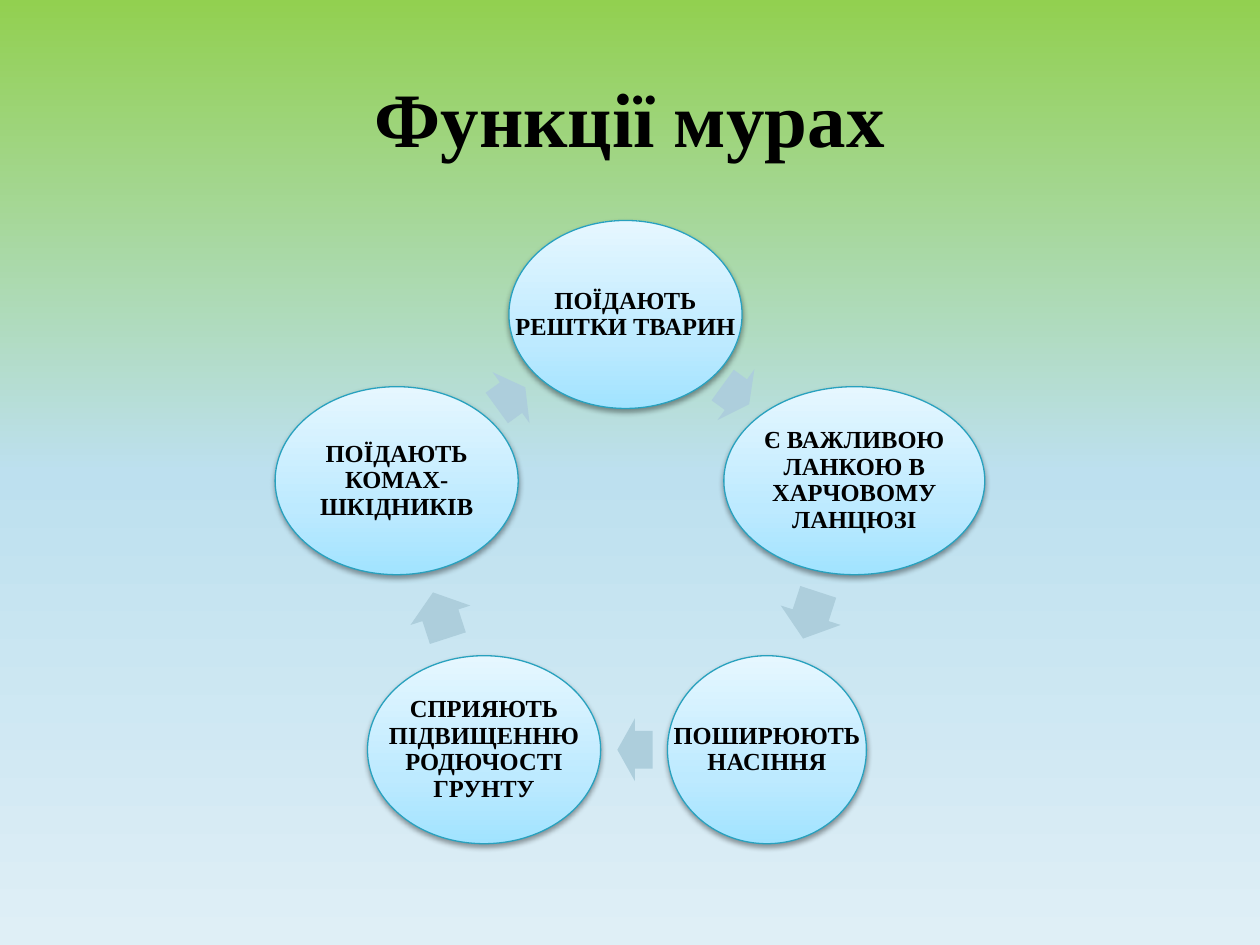
"""Build a slide with a five-step ring of the functions of ants."""
from math import cos, radians, sin

from lxml import etree
from pptx import Presentation
from pptx.dml.color import RGBColor
from pptx.enum.shapes import MSO_SHAPE
from pptx.enum.text import MSO_ANCHOR, PP_ALIGN
from pptx.oxml.ns import qn
from pptx.util import Cm, Pt

ELLIPSE, ARROW = MSO_SHAPE.OVAL, MSO_SHAPE.RIGHT_ARROW
MIDDLE, CENTER = MSO_ANCHOR.MIDDLE, PP_ALIGN.CENTER
COLORS = {
    "text": "000000", "outline": "28A1BE", "arrow": "ADCEDC",
    "grass": "92D050", "sky": "BDE0EF", "haze": "DFEFF6",
    "deep": "A1E3FF", "mid": "BDEAFF", "pale": "E6F7FF",
}
FONT = "Times New Roman"
CX, CY, RADIUS = 12.61, 11.19, 4.85
NODE_H, ARROW_H = 3.79, 1.27
STEPS = [
    ("ПОЇДАЮТЬ РЕШТКИ ТВАРИН", 4.7, 0.66, -0.1),
    ("Є ВАЖЛИВОЮ ЛАНКОЮ В ХАРЧОВОМУ ЛАНЦЮЗІ", 5.26, 0.99, 0),
    ("ПОШИРЮЮТЬ НАСІННЯ", 4.01, 0.71, -0.19),
    ("СПРИЯЮТЬ ПІДВИЩЕННЮ РОДЮЧОСТІ ГРУНТУ", 4.7, 0.97, 0),
    ("ПОЇДАЮТЬ КОМАХ-ШКІДНИКІВ", 4.9, 0.71, 0),
]


def set_gradient(fill, element, stops, angle):
    fill.gradient()
    grad = element.find(".//" + qn("a:gradFill"))
    gs_lst = grad.find(qn("a:gsLst"))
    gs_lst.clear()
    for pos, name in stops:
        gs = etree.SubElement(gs_lst, qn("a:gs"), pos=str(pos * 1000))
        etree.SubElement(gs, qn("a:srgbClr"), val=COLORS[name])
    grad.find(qn("a:lin")).set("ang", str(angle * 60000))


def add_text(box, text, size, inset_x, inset_y, spacing):
    tb = s.shapes.add_textbox(*box)
    tf = tb.text_frame
    tf.word_wrap = True
    tf.vertical_anchor = MIDDLE
    tf.margin_left = tf.margin_right = Cm(inset_x)
    tf.margin_top = tf.margin_bottom = Cm(inset_y)
    p = tf.paragraphs[0]
    p.text = text
    p.alignment = CENTER
    p.line_spacing = spacing
    p.font.name = FONT
    p.font.size = Pt(size)
    p.font.bold = True
    p.font.color.rgb = RGBColor.from_string(COLORS["text"])


prs = Presentation()
prs.slide_width, prs.slide_height = Cm(25.4), Cm(19.05)
s = prs.slides.add_slide(prs.slide_layouts[6])
set_gradient(s.background.fill, s._element,
             [(0, "grass"), (50, "sky"), (100, "haze")], 90)

add_text((Cm(1.27), Cm(0.76), Cm(22.86), Cm(3.18)),
         "Функції мурах", 44, 0.25, 0.13, 1.0)

for i, (text, width, arrow_w, shift) in enumerate(STEPS):
    angle = radians(72 * i)
    x, y = CX + RADIUS * sin(angle), CY - RADIUS * cos(angle)
    box = Cm(x - width / 2), Cm(y - NODE_H / 2), Cm(width), Cm(NODE_H)
    sp = s.shapes.add_shape(ELLIPSE, *box)
    set_gradient(sp.fill, sp._element,
                 [(0, "deep"), (35, "mid"), (100, "pale")], 270)
    sp.line.color.rgb = RGBColor.from_string(COLORS["outline"])
    sp.line.width = Pt(0.75)
    sp.shadow.inherit = False
    effects = sp._element.spPr.find(qn("a:effectLst"))
    shadow = etree.SubElement(
        effects, qn("a:outerShdw"), blurRad=str(Pt(3.1)), dist=str(Pt(1.6)),
        dir="5400000", algn="ctr", rotWithShape="0")
    color = etree.SubElement(shadow, qn("a:srgbClr"), val=COLORS["text"])
    etree.SubElement(color, qn("a:alpha"), val="38000")
    add_text(box, text, 14, 0.05, 0.05, 0.9)

    turn = 36 + 72 * i
    angle = radians(turn)
    reach = RADIUS * cos(radians(36))
    x = CX + reach * sin(angle) + shift * cos(angle)
    y = CY - reach * cos(angle) + shift * sin(angle)
    sp = s.shapes.add_shape(ARROW, Cm(x - arrow_w / 2), Cm(y - ARROW_H / 2),
                            Cm(arrow_w), Cm(ARROW_H))
    sp.adjustments[0], sp.adjustments[1] = 0.6, 0.5
    sp.rotation = turn
    sp.fill.solid()
    sp.fill.fore_color.rgb = RGBColor.from_string(COLORS["arrow"])
    sp.line.fill.background()
    sp.shadow.inherit = False

prs.save("out.pptx")
